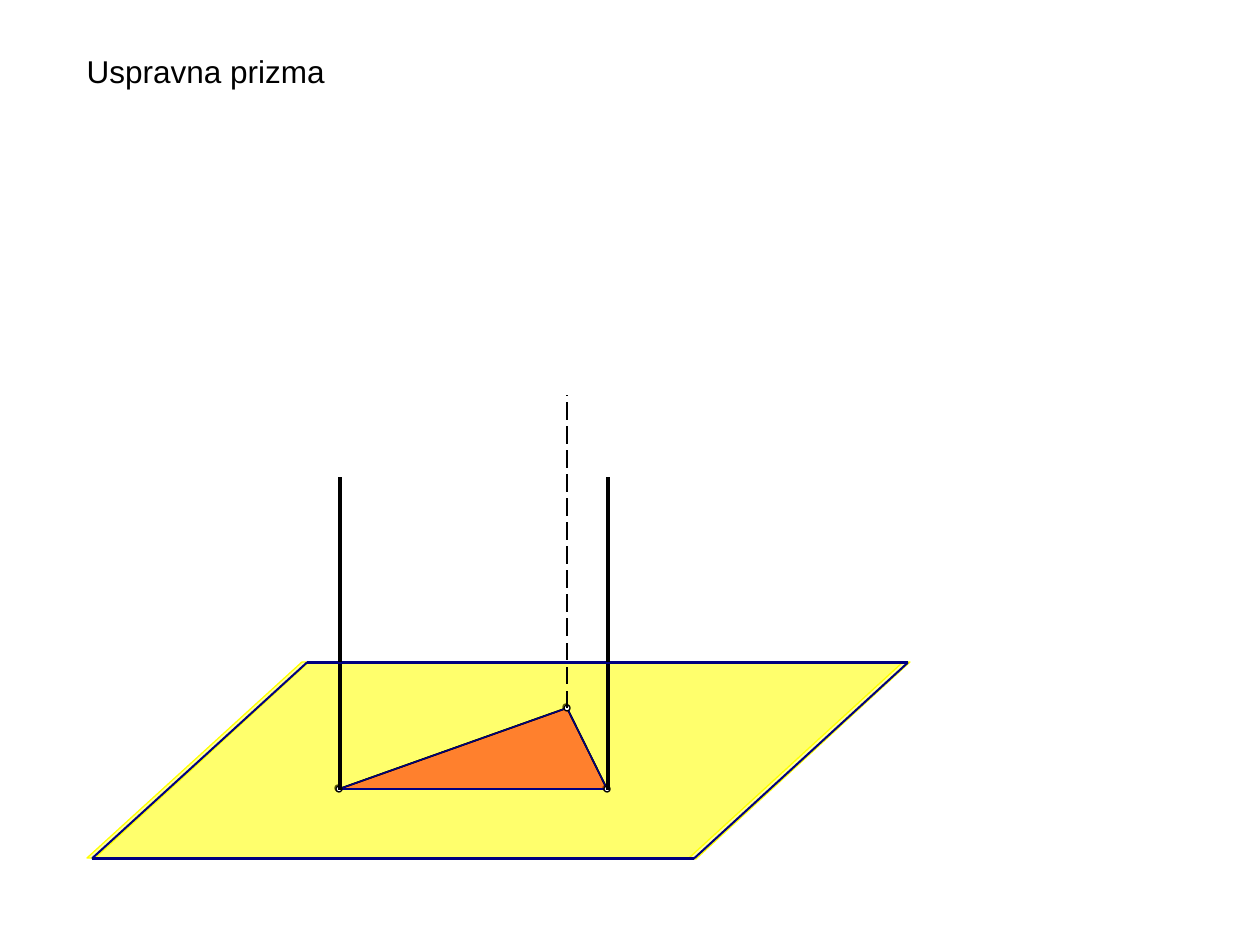
from lxml import etree
from pptx import Presentation
from pptx.dml.color import RGBColor
from pptx.enum.dml import MSO_LINE
from pptx.enum.shapes import MSO_CONNECTOR, MSO_SHAPE
from pptx.enum.text import MSO_ANCHOR, PP_ALIGN
from pptx.oxml.ns import qn
from pptx.util import Pt

SCALE = 914400 / 126
DASH = MSO_LINE.LONG_DASH
LINE = MSO_CONNECTOR.STRAIGHT
OVAL = MSO_SHAPE.OVAL
LEFT = PP_ALIGN.LEFT
TOP = MSO_ANCHOR.TOP

YELLOW = RGBColor(0xFF, 0xFF, 0x00)
RED = RGBColor(0xFF, 0x00, 0x00)
NAVY = RGBColor(0x00, 0x00, 0x80)
BLACK = RGBColor(0x00, 0x00, 0x00)
WHITE = RGBColor(0xFF, 0xFF, 0xFF)

BASE = [(339, 789), (607, 789), (567, 708)]


def px(n):
    return round(n * SCALE)


def paint(shape, fill, color, width):
    shape.shadow.inherit = False
    shape.fill.solid()
    shape.fill.fore_color.rgb = fill
    shape.line.color.rgb = color
    shape.line.width = Pt(width)


def add_text(shape, text, size, color, font="Arial", align=LEFT):
    frame = shape.text_frame
    frame.word_wrap = True
    frame.vertical_anchor = TOP
    para = frame.paragraphs[0]
    para.alignment = align
    run = para.add_run()
    run.text = text
    run.font.size = Pt(size)
    run.font.name = font
    run.font.color.rgb = color


def add_title(slide, text, box):
    title = slide.shapes.title
    title.left, title.top, title.width, title.height = map(px, box)
    add_text(title, text, size=18, color=BLACK)


def add_area(slide, points, fill, color, width):
    pen = slide.shapes.build_freeform(*points[0], scale=SCALE)
    pen.add_line_segments(points[1:], close=True)
    area = pen.convert_to_shape()
    paint(area, fill, color, width)
    tint = area.fill._xPr.find(qn("a:solidFill"))[0]
    etree.SubElement(tint, qn("a:alpha")).set("val", "35000")


def add_line(slide, start, end, color=NAVY, width=0.75, dash=None):
    line = slide.shapes.add_connector(LINE, *map(px, (*start, *end)))
    line.line.color.rgb = color
    line.line.width = Pt(width)
    if dash:
        line.line.dash_style = dash
    etree.SubElement(line._element.spPr, qn("a:effectLst"))


def add_edges(slide, points):
    for start, end in zip(points, points[1:] + points[:1]):
        add_line(slide, start, end)


def add_dots(slide, points, shift):
    for x, y in points:
        box = (x - shift, y - shift, 6, 6)
        dot = slide.shapes.add_shape(OVAL, *map(px, box))
        paint(dot, WHITE, BLACK, 0)


def plane(left, top, low):
    return [(left, low), (left + 602, low),
            (left + 816, top), (left + 215, top)]


def main():
    deck = Presentation()
    deck.slide_width, deck.slide_height = px(1260), px(945)
    slide = deck.slides.add_slide(deck.slide_layouts[5])
    add_title(slide, "Uspravna prizma", (74, 46, 714, 50))

    add_area(slide, plane(87, 662, 858), YELLOW, YELLOW, 0)
    add_area(slide, BASE, RED, BLACK, 1)
    add_dots(slide, BASE, shift=4)
    add_area(slide, plane(94, 662, 859), YELLOW, YELLOW, 0)
    add_edges(slide, plane(92, 662, 858))
    add_area(slide, BASE, RED, BLACK, 1)
    add_edges(slide, BASE)
    add_dots(slide, BASE, shift=3)

    left, right, back = BASE
    for x, y in (left, right):
        add_line(slide, (x + 1, y + 1), (x + 1, y - 312), BLACK, 2)
    add_line(slide, back, (back[0], back[1] - 313), BLACK, 1.25, DASH)
    add_edges(slide, plane(92, 663, 859))
    deck.save("out.pptx")


if __name__ == "__main__":
    main()
